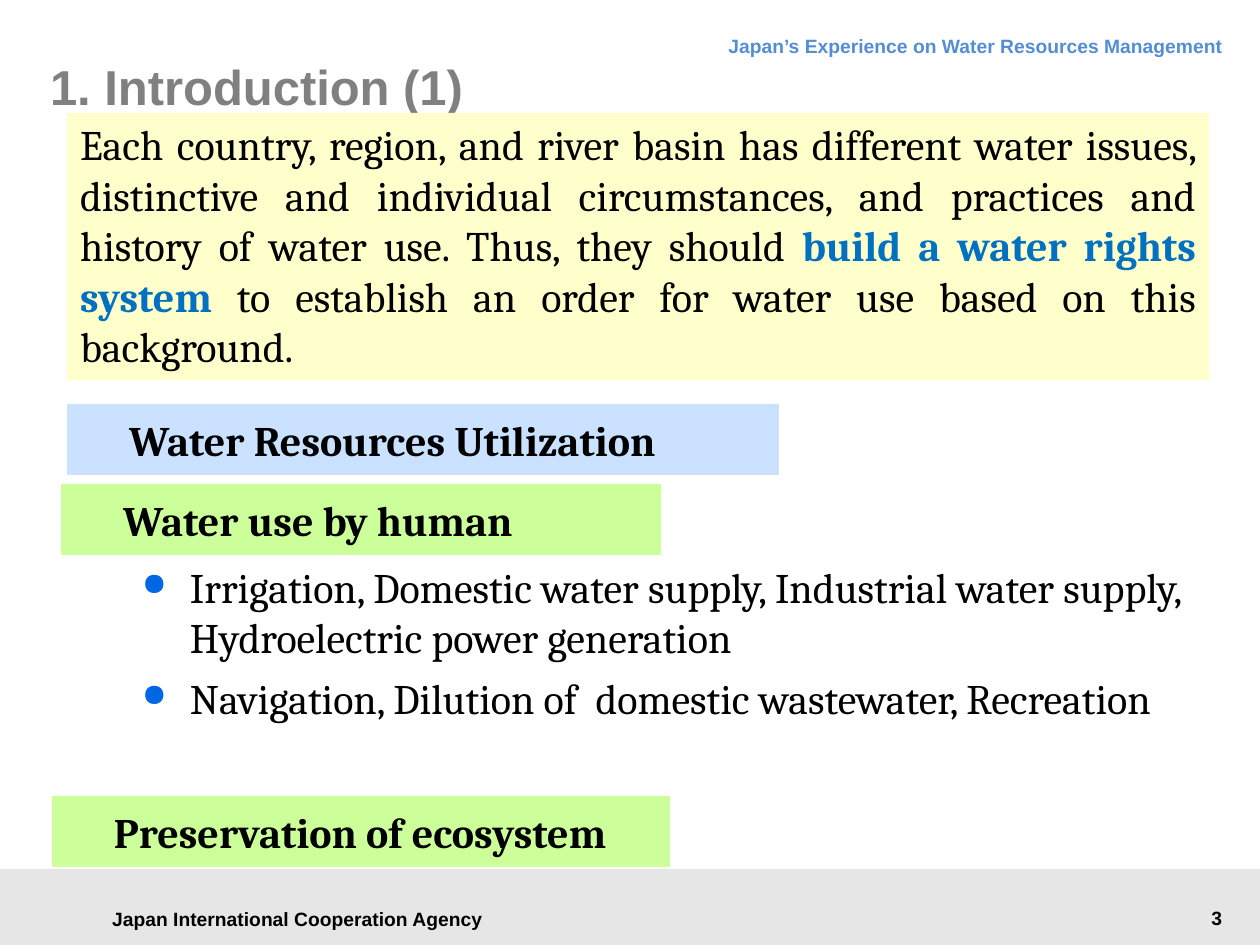
from lxml.etree import SubElement
from pptx import Presentation
from pptx.dml.color import RGBColor as RGB
from pptx.enum.shapes import MSO_SHAPE as Kind
from pptx.enum.text import MSO_ANCHOR as Anchor, PP_ALIGN as Align
from pptx.oxml.ns import qn
from pptx.util import Pt

SCALE = 914400 / 126
BLACK = RGB(0, 0, 0)
GREY = RGB(0x80, 0x80, 0x80)
SKY = RGB(0x54, 0x8D, 0xD4)
BLUE = RGB(0x00, 0x70, 0xC0)
DOT = RGB(0x00, 0x67, 0xE4)
BAND = RGB(0xE6, 0xE6, 0xE6)
CREAM = RGB(0xFF, 0xFF, 0xCC)
PALE = RGB(0xCA, 0xE2, 0xFF)
GREEN = RGB(0xCC, 0xFF, 0x9A)
HEAD, BODY = "Arial", "Cambria"
TIGHT = (0, 0, 0, 0)
PLAIN = (13, 6, 13, 6)
WIDE = (54, 10, 44, 10)
LIST = (54, 10, 0, 10)


def px(num):
    return round(num * SCALE)


class Page:
    def __init__(self, deck):
        self.slide = deck.slides.add_slide(deck.slide_layouts[6])

    def frame(self, shape, pad, anchor):
        frame = shape.text_frame
        frame.word_wrap = True
        frame.vertical_anchor = anchor
        (frame.margin_left, frame.margin_top,
         frame.margin_right, frame.margin_bottom) = map(px, pad)
        return frame

    def style(self, para, size, face, color, bold=False):
        font = para.font
        font.size, font.name, font.bold = Pt(size), face, bold
        font.color.rgb = color

    def rect(self, box, fill):
        shape = self.slide.shapes.add_shape(Kind.RECTANGLE, *map(px, box))
        shape.shadow.inherit = False
        shape.fill.solid()
        shape.fill.fore_color.rgb = fill
        shape.line.fill.background()
        return shape

    def label(self, box, text, size=11, color=BLACK, align=Align.LEFT,
              pad=PLAIN, anchor=Anchor.TOP, pitch=None):
        shape = self.slide.shapes.add_textbox(*map(px, box))
        para = self.frame(shape, pad, anchor).paragraphs[0]
        para.text, para.alignment = text, align
        if pitch:
            para.line_spacing = Pt(pitch)
        self.style(para, size, HEAD, color, True)

    def banner(self, box, text, fill):
        frame = self.frame(self.rect(box, fill), WIDE, Anchor.TOP)
        para = frame.paragraphs[0]
        para.text, para.alignment = text, Align.LEFT
        para._p.get_or_add_pPr().set("marL", str(px(8)))
        self.style(para, 24, BODY, BLACK, True)

    def note(self, box, parts, fill):
        frame = self.frame(self.rect(box, fill), PLAIN, Anchor.TOP)
        para = frame.paragraphs[0]
        para.alignment = Align.JUSTIFY
        self.style(para, 24, BODY, BLACK)
        for text, strong in parts:
            run = para.add_run()
            run.text = text
            if strong:
                run.font.bold = True
                run.font.color.rgb = BLUE

    def bullets(self, box, items):
        shape = self.slide.shapes.add_textbox(*map(px, box))
        frame = self.frame(shape, LIST, Anchor.TOP)
        for num, item in enumerate(items):
            para = frame.add_paragraph() if num else frame.paragraphs[0]
            para.text, para.space_after = item, Pt(6)
            props = para._p.get_or_add_pPr()
            props.set("marL", str(px(48)))
            props.set("indent", str(px(-48)))
            tint = SubElement(props, qn("a:buClr"))
            SubElement(tint, qn("a:srgbClr"), val=str(DOT))
            SubElement(props, qn("a:buSzPct"), val="75000")
            SubElement(props, qn("a:buChar"), char="●")
            self.style(para, 24, BODY, BLACK)


def main():
    deck = Presentation()
    deck.slide_width, deck.slide_height = px(1260), px(945)
    page = Page(deck)
    page.rect((0, 869, 1260, 76), BAND)
    page.label((89, 897, 417, 43), "Japan International Cooperation Agency",
               align=Align.CENTER, anchor=Anchor.MIDDLE)
    page.label((355, 20, 881, 48),
               "Japan’s Experience on Water Resources Management",
               color=SKY, align=Align.RIGHT, pitch=18)
    page.label((1037, 900, 198, 36), "3", align=Align.RIGHT)
    page.label((50, 36, 598, 100), "1. Introduction (1)", size=28,
               color=GREY, pad=TIGHT, anchor=Anchor.MIDDLE)
    page.note((67, 113, 1142, 267), [
        ("Each country, region, and river basin has different water issues, "
         "distinctive and individual circumstances, and practices and "
         "history of water use. Thus, they should ", False),
        ("build a water rights system ", True),
        ("to establish an order for water use based on this background.",
         False),
    ], CREAM)
    page.banner((67, 404, 712, 71), "Water Resources Utilization", PALE)
    page.banner((61, 484, 600, 71), "Water use by human", GREEN)
    page.bullets((88, 551, 1099, 234), [
        "Irrigation, Domestic water supply, Industrial water supply, "
        "Hydroelectric power generation",
        "Navigation, Dilution of  domestic wastewater, Recreation",
    ])
    page.banner((52, 796, 618, 71), "Preservation of ecosystem", GREEN)
    deck.save("out.pptx")


if __name__ == "__main__":
    main()
